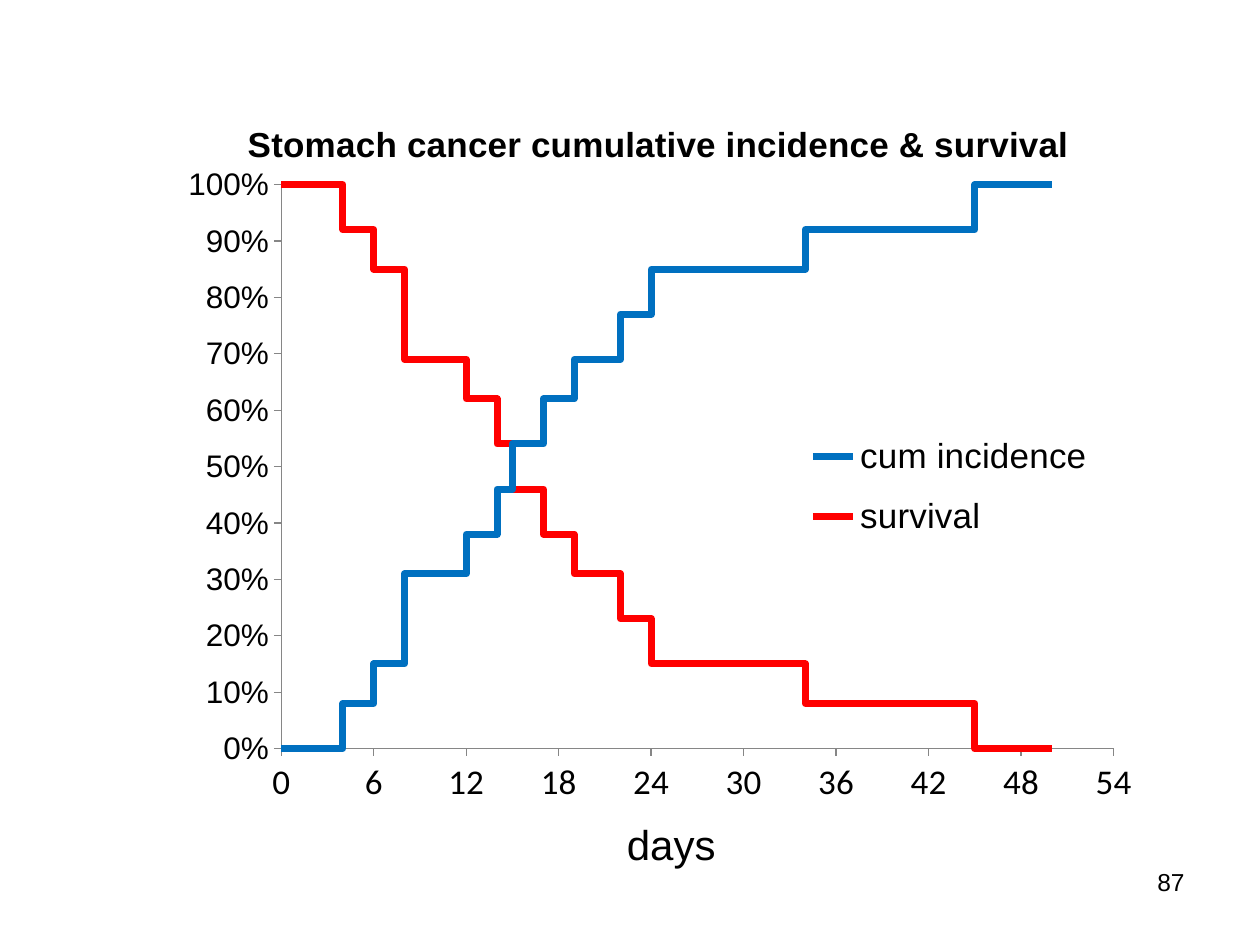
from lxml import etree
from pptx import Presentation
from pptx.chart.data import XyChartData
from pptx.dml.color import RGBColor
from pptx.enum import chart as ch, text
from pptx.oxml.ns import qn
from pptx.util import Inches, Pt

BLACK = RGBColor(0x00, 0x00, 0x00)
BLUE = RGBColor(0x00, 0x70, 0xC0)
RED = RGBColor(0xFF, 0x00, 0x00)
AXIS_GREY = RGBColor(0x86, 0x86, 0x86)

PATIENTS = 13
LAST_DAY = 50
DEATHS = [(4, 1), (6, 1), (8, 2), (12, 1), (14, 1), (15, 1), (17, 1),
          (19, 1), (22, 1), (24, 1), (34, 1), (45, 1)]


def incidence_steps():
    """Return the corner points (day, cumulative share) of the step curve."""
    points, total = [(0, 0)], 0
    for day, count in DEATHS:
        points.append((day, round(total / PATIENTS, 2)))
        total += count
        points.append((day, round(total / PATIENTS, 2)))
    return points + [(LAST_DAY, 1)]


def style_font(font, size, name="Arial", bold=False):
    font.size = Pt(size)
    font.name = name
    font.bold = bold
    font.color.rgb = BLACK


def write_text(tf, content, size, align=None, **style):
    p = tf.paragraphs[0]
    p.alignment = align
    r = p.add_run()
    r.text = content
    style_font(r.font, size, **style)


def place(parent, before, inner=False, **box):
    """Give a chart part a manual layout, in fractions of the chart."""
    for old in parent.findall(qn("c:layout")):
        parent.remove(old)
    layout = etree.Element(qn("c:layout"))
    manual = etree.SubElement(layout, qn("c:manualLayout"))
    if inner:
        etree.SubElement(manual, qn("c:layoutTarget"), val="inner")
    for key in ("x", "y"):
        etree.SubElement(manual, qn(f"c:{key}Mode"), val="edge")
    for key, value in box.items():
        etree.SubElement(manual, qn(f"c:{key}"), val=str(value))
    parent.find(qn(before)).addprevious(layout)


def style_axis(axis, maximum, step, size, font_name):
    axis.minimum_scale = 0
    axis.maximum_scale = maximum
    axis.major_unit = step
    axis.has_major_gridlines = False
    axis.major_tick_mark = ch.XL_TICK_MARK.OUTSIDE
    axis.minor_tick_mark = ch.XL_TICK_MARK.NONE
    axis.format.line.color.rgb = AXIS_GREY
    axis.format.line.width = Pt(0.75)
    style_font(axis.tick_labels.font, size, font_name)


def add_titles(chart):
    chart.has_title = True
    title = chart.chart_title
    write_text(title.text_frame, "Stomach cancer cumulative incidence & survival",
               20, bold=True)
    overlay = title._element.find(qn("c:overlay"))
    overlay.set("val", "1")
    place(title._element, "c:overlay", x=0.11, y=0.04)

    days = chart.category_axis.axis_title
    write_text(days.text_frame, "days", 24)
    place(days._element, "c:overlay", x=0.47, y=0.92)


def add_legend(chart):
    chart.has_legend = True
    legend = chart.legend
    legend.position = ch.XL_LEGEND_POSITION.RIGHT
    legend.include_in_layout = False
    style_font(legend.font, 20)
    place(legend._element, "c:overlay", x=0.64, y=0.42, w=0.29, h=0.18)


def add_survival_chart(s):
    steps = incidence_steps()
    data = XyChartData()
    incidence = data.add_series("cum incidence")
    survival = data.add_series("survival")
    for day, share in steps:
        incidence.add_data_point(day, share)
        survival.add_data_point(day, round(1 - share, 2))

    chart = s.shapes.add_chart(
        ch.XL_CHART_TYPE.XY_SCATTER_LINES_NO_MARKERS, Inches(1), Inches(0.67),
        Inches(8.33), Inches(6.33), data).chart
    style_font(chart.font, 14)
    plot = chart.plots[0]
    plot.vary_by_categories = False
    for series, color in zip(plot.series, (BLUE, RED)):
        series.smooth = False
        series.marker.style = ch.XL_MARKER_STYLE.NONE
        series.format.line.color.rgb = color
        series.format.line.width = Pt(4)

    style_axis(chart.category_axis, 54, 6, 20, "Calibri")
    style_axis(chart.value_axis, 1, 0.1, 18, "Arial")
    labels = chart.value_axis.tick_labels
    labels.number_format = "0%"
    labels.number_format_is_linked = False

    add_titles(chart)
    add_legend(chart)
    place(plot._element.getparent(), "c:scatterChart", inner=True,
          x=0.148, y=0.127, w=0.793, h=0.715)


def add_page_number(s, number):
    sp = s.shapes.add_textbox(Inches(7.17), Inches(6.83), Inches(2.33), Inches(0.52))
    tf = sp.text_frame
    tf.word_wrap = True
    write_text(tf, number, 14, align=text.PP_ALIGN.RIGHT)


def main():
    prs = Presentation()
    prs.slide_width, prs.slide_height = Inches(10), Inches(7.5)
    s = prs.slides.add_slide(prs.slide_layouts[6])
    add_page_number(s, "87")
    add_survival_chart(s)
    prs.save("out.pptx")


if __name__ == "__main__":
    main()
